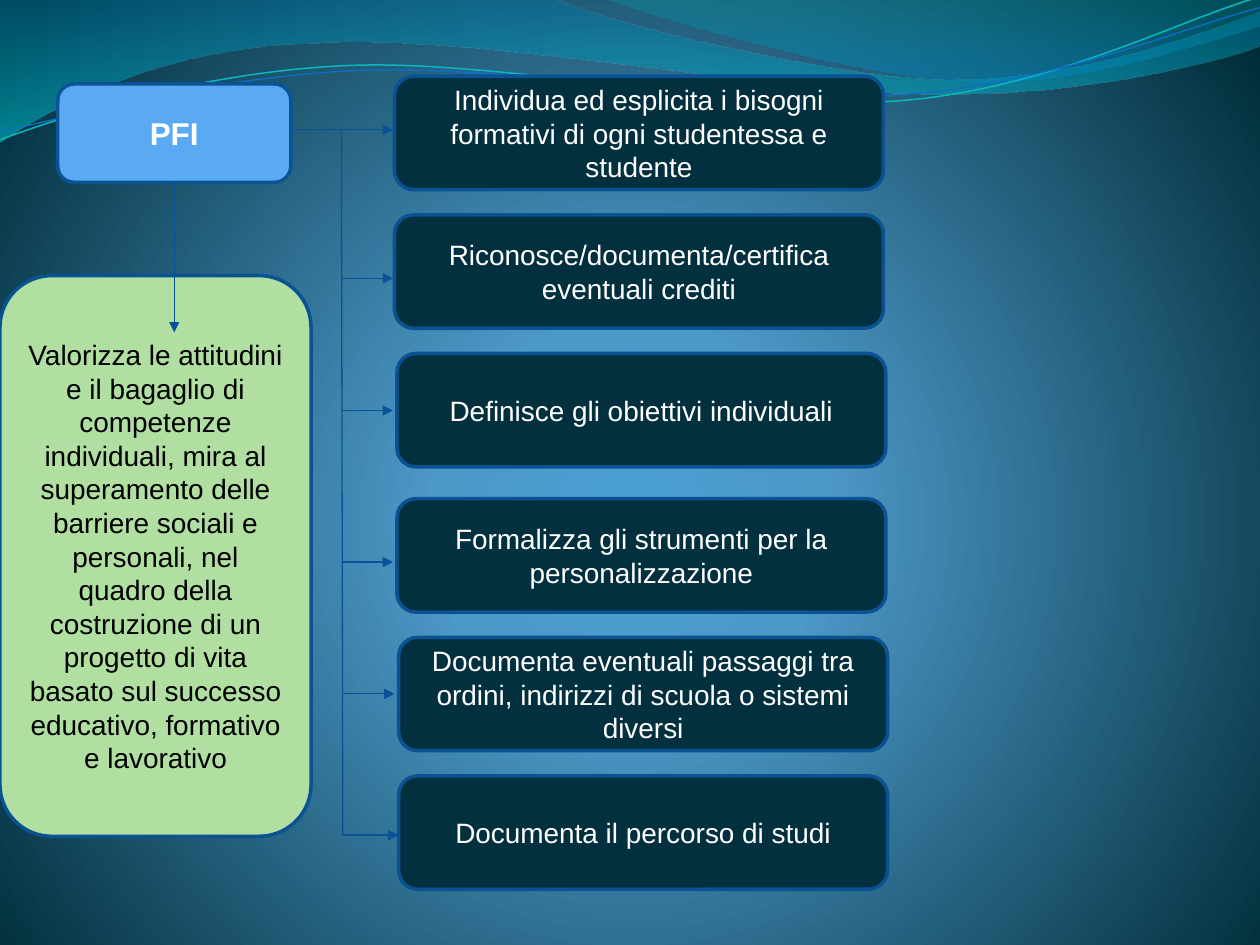
from dataclasses import dataclass

from lxml import etree
from pptx import Presentation
from pptx import util as u
from pptx.dml.color import RGBColor
from pptx.enum import shapes, text
from pptx.oxml import parse_xml
from pptx.oxml.ns import nsdecls, qn


@dataclass(frozen=True)
class Theme:
    font: str = "Arial"
    title_size: int = 18
    body_size: int = 16
    white: str = "FFFFFF"
    black: str = "000000"
    plan_fill: str = "59AAF2"
    plan_border: str = "0B5394"
    task_fill: str = "02303E"
    goal_fill: str = "B0DFA1"
    border: str = "0B5292"
    arrow: str = "095295"
    border_width: float = 2
    arrow_width: float = 0.75
    # Gradient stops: position %, colour, opacity %
    backdrop: tuple = ((0, "4AA0D6", 100), (25, "4C98C7", 100), (100, "002C38", 100))
    wide_wave: tuple = ((0, "0074A1", 45), (100, "00C6CF", 55))
    right_wave: tuple = ((0, "00A1A9", 30), (80, "008BBF", 45))
    teal_line: str = "0AB8BF"
    blue_line: str = "0F6FC6"


THEME = Theme()
DOWNWARD = '<a:lin ang="5400000" scaled="0"/>'
RADIAL = ('<a:path path="circle">'
          '<a:fillToRect l="10000" t="110000" r="10000" b="100000"/></a:path>')

# Waves: frame, then a start point, lines (2 numbers) and Bezier curves (6 numbers)
WIDE_WAVE = ((-0.7, -0.7, 721.4, 82.1), [
    (0, 0), (316.8, -0.7),
    (342.7, 12.2, 478.1, 45.4, 545.8, 45.4),
    (614.2, 45.4, 689.8, 18.7, 720, 6.5), (720.7, 25.9),
    (707.8, 31.7, 626.4, 54.7, 537.1, 54),
    (447.8, 54, 275, 20.2, 185, 24.5),
    (92.9, 25.9, 33.1, 59.8, -0.7, 81.4), (0, 0)])
RIGHT_WAVE = ((344.9, -0.7, 375.1, 50.4), [
    (344.9, -0.7), (366.5, 7.9, 491, 44.6, 553.7, 46.8),
    (616.3, 49.7, 691.9, 23, 720, 15.1), (720, 0), (344.9, -0.7)])
TEAL_LINE = ((-1.4, 15.6, 721.6, 51.2), [
    (-1.4, 62.9), (33.7, 51.7, 114, 29.4, 199.8, 29.9),
    (284.8, 30.3, 425.8, 67.2, 512.4, 64.9),
    (599, 62.4, 676.4, 25.7, 720.2, 15.6)])
BLUE_LINE = ((-1.2, 21.4, 722.6, 42.1), [
    (-1.2, 58), (33, 53.8, 118.3, 32.5, 204, 33),
    (290.5, 33.5, 428.9, 63.8, 515.5, 61.3),
    (601.3, 59.6, 678.5, 30.1, 721.4, 21.4)])
LINE_TILT = 357.3

GOAL = ("Valorizza le attitudini e il bagaglio di competenze individuali, mira al "
        "superamento delle barriere sociali e personali, nel quadro della costruzione "
        "di un progetto di vita basato sul successo educativo, formativo e lavorativo")

# Tasks: wording, box left, arrow start, arrow end, arrow height
TASKS = [
    ("Individua ed esplicita i bisogni formativi di ogni studentessa e studente",
     225.4, 166.3, 224.6, 74.2),
    ("Riconosce/documenta/certifica eventuali crediti", 225.4, 195.3, 224.6, 159),
    ("Definisce gli obiettivi individuali", 226.8, 195.3, 224.6, 234.6),
    ("Formalizza gli strumenti per la personalizzazione", 226.8, 195.3, 224.6, 321.2),
    ("Documenta eventuali passaggi tra ordini, indirizzi di scuola o sistemi diversi",
     227.8, 195.9, 225.5, 396.5),
    ("Documenta il percorso di studi", 227.8, 195.9, 227.8, 477.2),
]
TASK_TOP, TASK_STEP, GROUP_GAP = 43.6, 79.2, 3.8
TASK_WIDTH, TASK_HEIGHT = 279.4, 64.8


def rgb(colour):
    return RGBColor.from_string(colour)


def set_gradient(fill, properties, stops, direction):
    fill.solid()
    marks = "".join(
        f'<a:gs pos="{at * 1000}"><a:srgbClr val="{colour}">'
        f'<a:alpha val="{opacity * 1000}"/></a:srgbClr></a:gs>'
        for at, colour, opacity in stops)
    gradient = parse_xml(f'<a:gradFill {nsdecls("a")} rotWithShape="1">'
                         f'<a:gsLst>{marks}</a:gsLst>{direction}</a:gradFill>')
    properties.replace(properties.find(qn("a:solidFill")), gradient)


def add_outline(slide, frame, segments, closed):
    """Build an outline from segment ends, then bend its curved segments."""
    left, top, width, height = (u.Pt(value) for value in frame)
    start, *ends = [(u.Pt(s[-2]), u.Pt(s[-1])) for s in segments]
    builder = slide.shapes.build_freeform(*start)
    builder.add_line_segments(ends, close=closed)
    outline = builder.convert_to_shape()
    outline.shadow.inherit = False
    outline.left, outline.top, outline.width, outline.height = left, top, width, height

    track = outline.element.xpath(".//a:pathLst/a:path")[0]
    track.set("w", str(width))
    track.set("h", str(height))
    for step, segment in zip(list(track), segments):
        for point in list(step):
            step.remove(point)
        if len(segment) == 6:
            step.tag = qn("a:cubicBezTo")
        for x, y in zip(segment[::2], segment[1::2]):
            etree.SubElement(step, qn("a:pt"),
                             x=str(u.Pt(x) - left), y=str(u.Pt(y) - top))
    return outline


def add_wave(slide, frame, segments, stops):
    wave = add_outline(slide, frame, segments, True)
    wave.line.fill.background()
    set_gradient(wave.fill, wave.element.spPr, stops, DOWNWARD)


def add_wave_line(slide, frame, segments, colour, width):
    curve = add_outline(slide, frame, segments, False)
    curve.rotation = LINE_TILT
    curve.fill.background()
    curve.line.color.rgb = rgb(colour)
    curve.line.width = u.Pt(width)


def add_box(slide, wording, left, top, width, height, fill, border=THEME.border,
            colour=THEME.white, size=THEME.body_size, bold=False):
    box = slide.shapes.add_shape(shapes.MSO_SHAPE.ROUNDED_RECTANGLE,
                                 u.Pt(left), u.Pt(top), u.Pt(width), u.Pt(height))
    box.shadow.inherit = False
    box.fill.solid()
    box.fill.fore_color.rgb = rgb(fill)
    box.line.color.rgb = rgb(border)
    box.line.width = u.Pt(THEME.border_width)
    frame = box.text_frame
    frame.word_wrap = True
    frame.vertical_anchor = text.MSO_ANCHOR.MIDDLE
    frame.text = wording
    paragraph = frame.paragraphs[0]
    paragraph.alignment = text.PP_ALIGN.CENTER
    font = paragraph.runs[0].font
    font.name, font.size, font.bold = THEME.font, u.Pt(size), bold
    font.color.rgb = rgb(colour)
    return box


def add_link(slide, x1, y1, x2, y2, arrow=True):
    link = slide.shapes.add_connector(shapes.MSO_CONNECTOR.STRAIGHT,
                                      u.Pt(x1), u.Pt(y1), u.Pt(x2), u.Pt(y2))
    link.line.color.rgb = rgb(THEME.arrow)
    link.line.width = u.Pt(THEME.arrow_width)
    if arrow:
        outline = link.element.spPr.find(qn("a:ln"))
        etree.SubElement(outline, qn("a:tailEnd"), type="triangle")
    etree.SubElement(link.element.spPr, qn("a:effectLst"))
    return link


def main():
    deck = Presentation()
    deck.slide_width, deck.slide_height = u.Pt(720), u.Pt(540)
    slide = deck.slides.add_slide(deck.slide_layouts[6])

    # Backdrop and waves
    backdrop = slide.background.fill
    set_gradient(backdrop, slide.element.xpath(".//p:bgPr")[0], THEME.backdrop, RADIAL)
    add_wave(slide, *WIDE_WAVE, THEME.wide_wave)
    add_wave(slide, *RIGHT_WAVE, THEME.right_wave)
    add_wave_line(slide, *TEAL_LINE, THEME.teal_line, 0.85)
    add_wave_line(slide, *BLUE_LINE, THEME.blue_line, 0.75)

    # Plan and its goal
    plan = add_box(slide, "PFI", 33, 48, 133.2, 56.2, THEME.plan_fill,
                   THEME.plan_border, size=THEME.title_size, bold=True)
    add_box(slide, GOAL, 0, 157.5, 177.8, 320.4, THEME.goal_fill, colour=THEME.black)
    goal_arrow = add_link(slide, 99.6, 104.2, 99.6, 190)
    goal_arrow.begin_connect(plan, 2)

    # Trunk, with one arrow to each task
    add_link(slide, 195.1, TASKS[0][-1], 195.9, TASKS[-1][-1], arrow=False)
    for row, (wording, left, arrow_start, arrow_end, arrow_y) in enumerate(TASKS):
        top = TASK_TOP + row * TASK_STEP + (GROUP_GAP if row >= 3 else 0)
        add_box(slide, wording, left, top, TASK_WIDTH, TASK_HEIGHT, THEME.task_fill)
        add_link(slide, arrow_start, arrow_y, arrow_end, arrow_y)

    deck.save("out.pptx")


if __name__ == "__main__":
    main()
